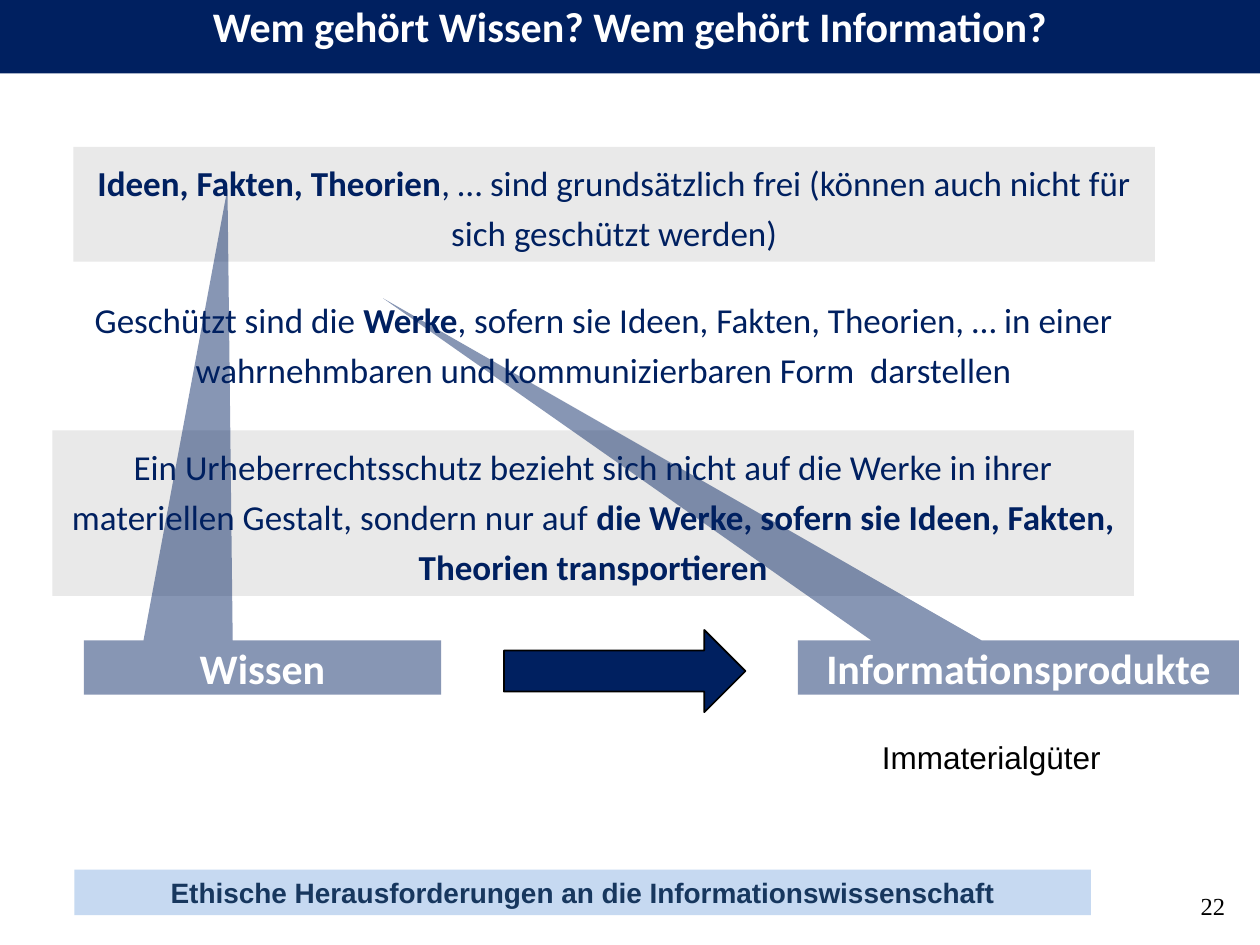
from dataclasses import dataclass

from lxml.etree import SubElement
from pptx import Presentation
from pptx.dml.color import RGBColor
from pptx.enum.shapes import MSO_SHAPE
from pptx.enum.text import MSO_ANCHOR, MSO_AUTO_SIZE, PP_ALIGN
from pptx.oxml.ns import qn
from pptx.util import Pt

NAVY = RGBColor(0x00, 0x20, 0x60)
STEEL = RGBColor(0x17, 0x37, 0x5E)
SKY = RGBColor(0xC6, 0xD9, 0xF1)
GREY = RGBColor(0xE9, 0xE9, 0xE9)
WHITE = RGBColor(0xFF, 0xFF, 0xFF)
BLACK = RGBColor(0x00, 0x00, 0x00)

PAD = (7.2, 3.6, 7.2, 3.6)
THIN = (1.4, 0.7, 1.4, 0.7)
NONE = (0, 0, 0, 0)


@dataclass
class Style:
    size: float
    color: RGBColor
    face: str = "Calibri"
    bold: bool = False
    align: PP_ALIGN = PP_ALIGN.CENTER
    anchor: MSO_ANCHOR = MSO_ANCHOR.TOP
    pad: tuple[float, float, float, float] = PAD
    lead: float | None = None
    grow: bool = False


@dataclass
class Box:
    left: float
    top: float
    width: float
    height: float
    style: Style
    runs: list[tuple[str, bool]]
    fill: RGBColor | None = None


@dataclass
class Callout:
    left: float
    width: float
    text: str
    tip: tuple[float, float]


def write(shape, style: Style, runs: list[tuple[str, bool]]) -> None:
    frame = shape.text_frame
    frame.word_wrap = True
    frame.vertical_anchor = style.anchor
    if style.grow:
        frame.auto_size = MSO_AUTO_SIZE.SHAPE_TO_FIT_TEXT
    (frame.margin_left, frame.margin_top,
     frame.margin_right, frame.margin_bottom) = map(Pt, style.pad)
    para = frame.paragraphs[0]
    para.alignment = style.align
    if style.lead:
        para.line_spacing = style.lead
    para.font.size = Pt(style.size)
    para.font.name = style.face
    para.font.color.rgb = style.color
    para.font.bold = style.bold
    for text, bold in runs:
        run = para.add_run()
        run.text = text
        if bold != style.bold:
            run.font.bold = bold


def add_form(slide, kind: MSO_SHAPE, area: tuple, fill: RGBColor):
    shape = slide.shapes.add_shape(kind, *map(Pt, area))
    shape.shadow.inherit = False
    shape.fill.solid()
    shape.fill.fore_color.rgb = fill
    shape.line.fill.background()
    return shape


def add_box(slide, box: Box) -> None:
    area = (box.left, box.top, box.width, box.height)
    if box.fill is None:
        shape = slide.shapes.add_textbox(*map(Pt, area))
    else:
        shape = add_form(slide, MSO_SHAPE.RECTANGLE, area, box.fill)
    write(shape, box.style, box.runs)


def add_callout(slide, call: Callout, style: Style) -> None:
    area = (call.left, 366, call.width, 31)
    shape = add_form(slide, MSO_SHAPE.RECTANGULAR_CALLOUT, area, NAVY)
    shape.adjustments[0], shape.adjustments[1] = call.tip
    color = shape.element.spPr.find(f"{qn('a:solidFill')}/{qn('a:srgbClr')}")
    SubElement(color, qn("a:alpha"), val="47000")
    write(shape, style, [(call.text, True)])


FOOT = Style(16, STEEL, "Arial", bold=True, anchor=MSO_ANCHOR.MIDDLE, pad=NONE)
PAGE = Style(14, BLACK, "Times New Roman", align=PP_ALIGN.RIGHT, pad=(0, 16, 0, 0))
TITLE = Style(24, WHITE, bold=True, lead=0.9)
BODY = Style(20, NAVY, lead=1.2, grow=True)
LABEL = Style(24, WHITE, bold=True, anchor=MSO_ANCHOR.MIDDLE, pad=THIN, grow=True)
NOTE = Style(18, BLACK, "Arial", grow=True)

BOXES = [
    # Footer and page number
    Box(42.5, 497, 581, 26, FOOT,
        [("Ethische Herausforderungen an die Informationswissenschaft", True)], SKY),
    Box(651, 493, 49, 37.5, PAGE, [("22", False)]),
    # Title band
    Box(0, 0, 720, 42, TITLE,
        [("Wem gehört Wissen? Wem gehört Information?", True)], NAVY),
    # Statements
    Box(42, 84, 618, 65.5, BODY, [
        ("Ideen, Fakten, Theorien", True),
        (", … sind grundsätzlich frei (können auch nicht für sich "
         "geschützt werden)", False)], GREY),
    Box(36, 162, 618, 65.5, BODY, [
        ("Geschützt sind die ", False),
        ("Werke", True),
        (", sofern sie Ideen, Fakten, Theorien, … in einer wahrnehmbaren "
         "und kommunizierbaren Form  darstellen", False)], WHITE),
    Box(30, 246, 618, 94.5, BODY, [
        ("Ein Urheberrechtsschutz bezieht sich nicht auf die Werke in ihrer "
         "materiellen Gestalt, sondern nur auf ", False),
        ("die Werke, sofern sie Ideen, Fakten, Theorien transportieren", True)],
        GREY),
]

CALLS = [
    Callout(48, 204, "Wissen", (-0.098, -8.831)),
    Callout(456, 252, "Informationsprodukte", (-1.441, -6.807)),
]


def main() -> None:
    deck = Presentation()
    deck.slide_width, deck.slide_height = Pt(720), Pt(540)
    slide = deck.slides.add_slide(deck.slide_layouts[6])

    for box in BOXES:
        add_box(slide, box)

    # From knowledge to information products
    for call in CALLS:
        add_callout(slide, call, LABEL)
    arrow = add_form(slide, MSO_SHAPE.RIGHT_ARROW, (288, 360, 138, 47), NAVY)
    arrow.line.color.rgb = BLACK
    arrow.line.width = Pt(1)
    add_box(slide, Box(439, 418, 255, 29, NOTE, [("Immaterialgüter", False)]))

    deck.save("out.pptx")


if __name__ == "__main__":
    main()
